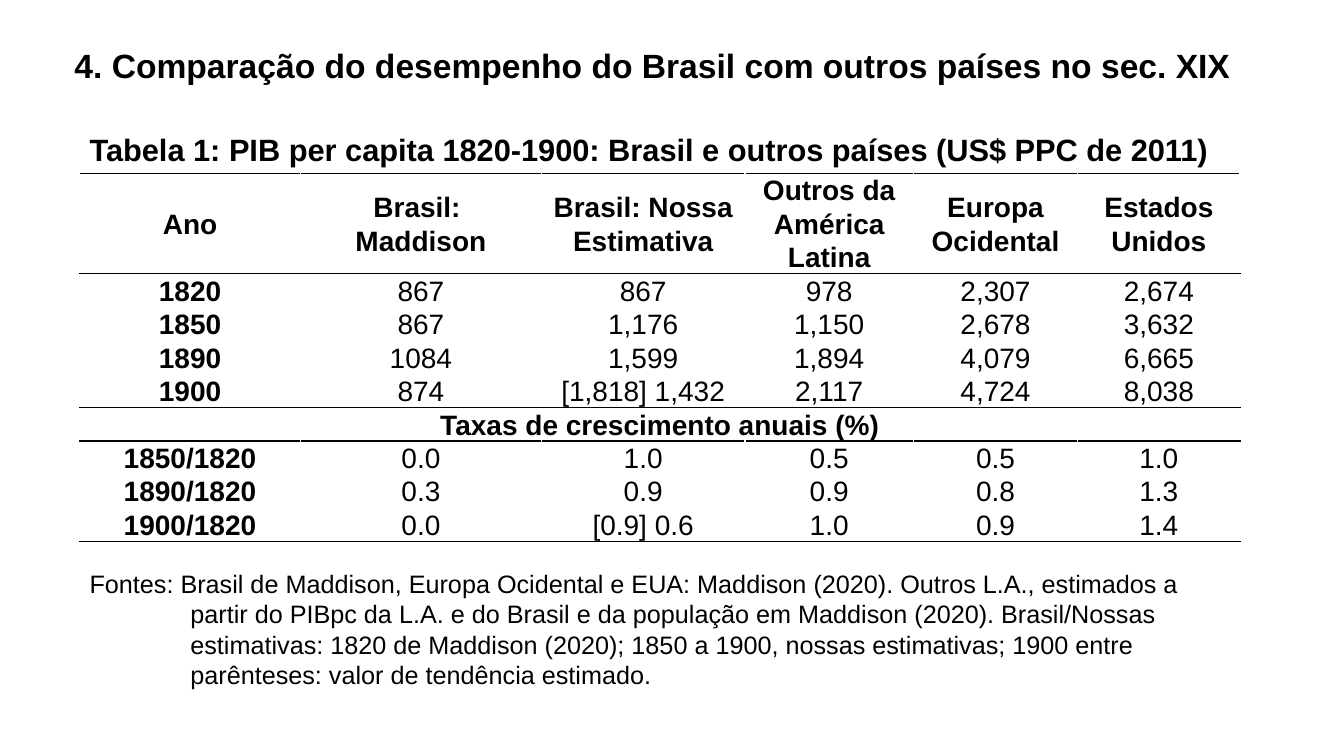
"""Build the slide comparing Brazil's nineteenth-century GDP per capita with other countries."""
from dataclasses import dataclass

from lxml import etree
from pptx import Presentation
from pptx import util as u
from pptx.dml import color
from pptx.enum import text
from pptx.oxml import ns

COLORS = {"ink": "000000", "paper": "FFFFFF"}
FONT = "Arial"


@dataclass(frozen=True)
class TextBlock:
    content: str
    left: float
    top: float
    width: float
    height: float
    size: int
    bold: bool = True
    margin: float = 0
    hanging: float = 0
    spacing: float = 1.0
    anchor: text.MSO_ANCHOR = text.MSO_ANCHOR.TOP
    auto_size: text.MSO_AUTO_SIZE = text.MSO_AUTO_SIZE.SHAPE_TO_FIT_TEXT


BLOCKS = [
    TextBlock("4. Comparação do desempenho do Brasil com outros países no sec. XIX",
              0.64, 0.32, 11.98, 0.7, 24, spacing=0.9,
              anchor=text.MSO_ANCHOR.MIDDLE, auto_size=text.MSO_AUTO_SIZE.NONE),
    TextBlock("Tabela 1: PIB per capita 1820-1900: Brasil e outros países (US$ PPC de 2011)",
              0.79, 1.25, 11.5, 0.47, 22, margin=1.27, hanging=1.27),
    TextBlock("Fontes: Brasil de Maddison, Europa Ocidental e EUA: Maddison (2020). "
              "Outros L.A., estimados a partir do PIBpc da L.A. e do Brasil e da população "
              "em Maddison (2020). Brasil/Nossas estimativas: 1820 de Maddison (2020); "
              "1850 a 1900, nossas estimativas; 1900 entre parênteses: valor de tendência "
              "estimado.",
              0.79, 5.59, 11.24, 1.31, 18, bold=False, margin=1, hanging=1.02),
]

COLUMN_WIDTHS = [2.19, 2.39, 2.02, 1.67, 1.63, 1.61]
HEADER_HEIGHT, ROW_HEIGHT = 0.53, 0.22
TABLE_ROWS = [
    ["Ano", "Brasil: \nMaddison", "Brasil: Nossa Estimativa", "Outros da América Latina",
     "Europa Ocidental", "Estados Unidos"],
    ["1820", "867", "867", "978", "2,307", "2,674"],
    ["1850", "867", "1,176", "1,150", "2,678", "3,632"],
    ["1890", "1084", "1,599", "1,894", "4,079", "6,665"],
    ["1900", "874", "[1,818] 1,432", "2,117", "4,724", "8,038"],
    ["Taxas de crescimento anuais (%)"],
    ["1850/1820", "0.0", "1.0", "0.5", "0.5", "1.0"],
    ["1890/1820", "0.3", "0.9", "0.9", "0.8", "1.3"],
    ["1900/1820", "0.0", "[0.9] 0.6", "1.0", "0.9", "1.4"],
]
RULED_BELOW = {-1, 0, 4, 5, 8}


def add_run(p, content: str, size: int, bold: bool) -> None:
    """Add one formatted run to a paragraph."""
    r = p.add_run()
    r.text = content
    r.font.name = FONT
    r.font.size = u.Pt(size)
    r.font.bold = bold
    r.font.color.rgb = color.RGBColor.from_string(COLORS["ink"])


def add_text(s, block: TextBlock) -> None:
    """Add a text box with an optional hanging indent."""
    sp = s.shapes.add_textbox(u.Inches(block.left), u.Inches(block.top),
                              u.Inches(block.width), u.Inches(block.height))
    tf = sp.text_frame
    tf.word_wrap = True
    tf.auto_size = block.auto_size
    tf.vertical_anchor = block.anchor
    p = tf.paragraphs[0]
    p.line_spacing = block.spacing
    if block.hanging:
        pPr = p._p.get_or_add_pPr()
        pPr.set("marL", str(u.Inches(block.margin)))
        pPr.set("indent", str(-u.Inches(block.hanging)))
    add_run(p, block.content, block.size, block.bold)


def set_borders(cell, row: int) -> None:
    """Draw black rules above and below the ruled rows and white lines elsewhere."""
    edges = {
        "L": "paper",
        "R": "paper",
        "T": "ink" if row - 1 in RULED_BELOW else "paper",
        "B": "ink" if row in RULED_BELOW else "paper",
    }
    tcPr = cell._tc.get_or_add_tcPr()
    for side, name in edges.items():
        ln = etree.SubElement(tcPr, ns.qn(f"a:ln{side}"), w=str(u.Pt(1)))
        fill = etree.SubElement(ln, ns.qn("a:solidFill"))
        etree.SubElement(fill, ns.qn("a:srgbClr"), val=COLORS[name])


def style_cell(cell, row: int) -> None:
    """Set the borders, fill, margins and anchor of a cell."""
    set_borders(cell, row)
    cell.fill.solid()
    cell.fill.fore_color.rgb = color.RGBColor.from_string(COLORS["paper"])
    cell.margin_left = cell.margin_right = u.Inches(0.05)
    cell.margin_top = cell.margin_bottom = u.Inches(0)
    cell.vertical_anchor = text.MSO_ANCHOR.MIDDLE


def fill_cell(cell, content: str, bold: bool) -> None:
    """Write centred paragraphs into a cell."""
    tf = cell.text_frame
    for i, line in enumerate(content.split("\n")):
        p = tf.add_paragraph() if i else tf.paragraphs[0]
        p.alignment = text.PP_ALIGN.CENTER
        p.line_spacing = 1.07
        add_run(p, line, 20, bold)


def add_gdp_table(s) -> None:
    """Add the table of GDP levels and growth rates."""
    height = u.Inches(3.69)
    frame = s.shapes.add_table(len(TABLE_ROWS), len(COLUMN_WIDTHS), u.Inches(0.79),
                               u.Inches(1.72), u.Inches(11.5), height)
    table = frame.table
    table.first_row = table.horz_banding = False
    for column, width in zip(table.columns, COLUMN_WIDTHS):
        column.width = u.Inches(width)
    for i, values in enumerate(TABLE_ROWS):
        table.rows[i].height = u.Inches(ROW_HEIGHT if i else HEADER_HEIGHT)
        for cell in table.rows[i].cells:
            style_cell(cell, i)
        if len(values) == 1:
            table.cell(i, 0).merge(table.cell(i, len(COLUMN_WIDTHS) - 1))
        for j, value in enumerate(values):
            fill_cell(table.cell(i, j), value, i == 0 or j == 0)
    frame.height = height


def main() -> None:
    """Create and save the presentation."""
    prs = Presentation()
    prs.slide_width, prs.slide_height = u.Inches(13.33), u.Inches(7.5)
    s = prs.slides.add_slide(prs.slide_layouts[6])
    add_gdp_table(s)
    for block in BLOCKS:
        add_text(s, block)
    prs.save("out.pptx")


if __name__ == "__main__":
    main()
